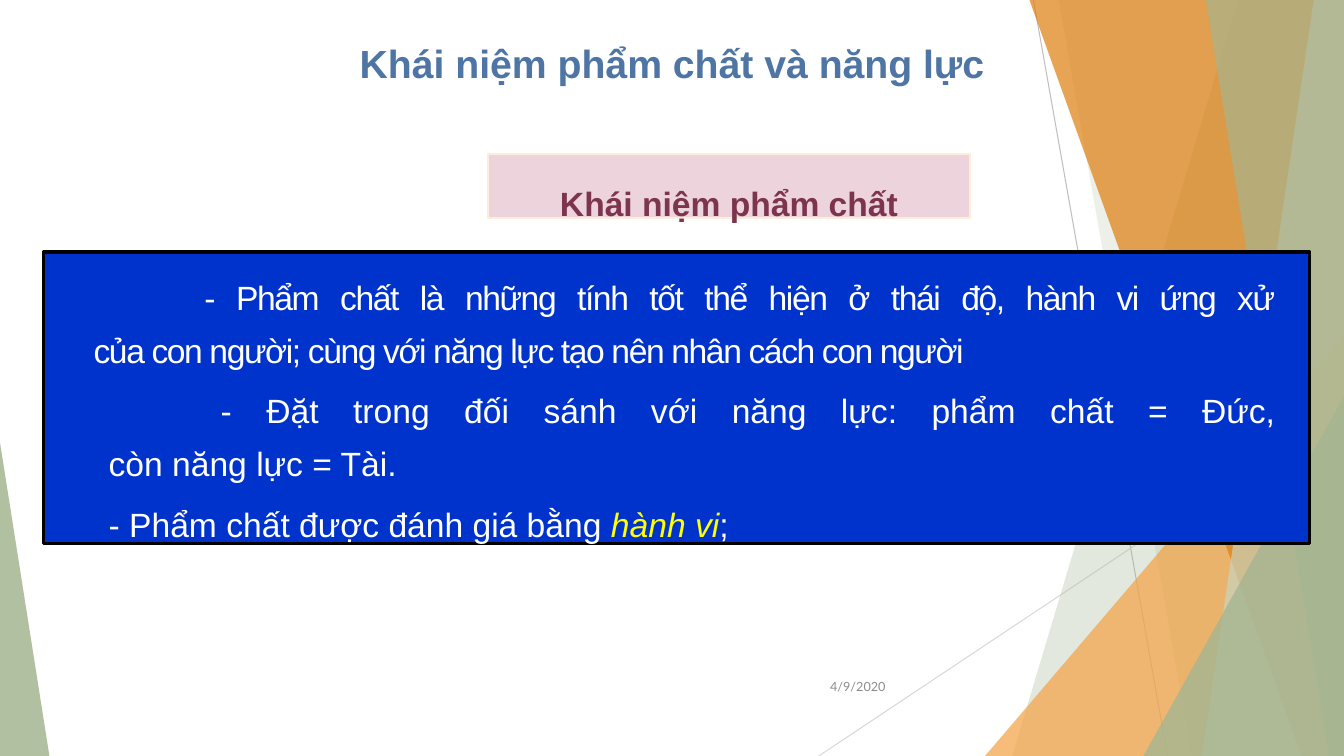
from dataclasses import dataclass

from lxml.etree import SubElement
from pptx import Presentation
from pptx.dml.color import RGBColor
from pptx.enum.shapes import MSO_CONNECTOR as Connector, MSO_SHAPE as Shape
from pptx.enum.text import MSO_ANCHOR as Anchor, PP_ALIGN as Align
from pptx.oxml.ns import qn
from pptx.util import Inches, Pt


@dataclass(frozen=True)
class Theme:
    green: str = "A5B592"
    pale_green: str = "C9D3BE"
    orange: str = "F3A447"
    dark_orange: str = "DD7E0E"
    line_dark: str = "BFBFBF"
    line_light: str = "D9D9D9"
    title: str = "4E75A3"
    heading: str = "7C354D"
    heading_fill: str = "ECD3DC"
    heading_line: str = "FDEDDA"
    panel: str = "0033CC"
    black: str = "000000"
    white: str = "FFFFFF"
    accent: str = "FFFF00"
    date: str = "8C8C8C"
    font: str = "Arial"
    date_font: str = "Lato"
    title_size: int = 28
    body_size: int = 24
    date_size: int = 9


THEME = Theme()
WIDTH, HEIGHT = 13.33, 7.5


def rgb(color):
    return RGBColor.from_string(color)


def style(font, color, size, name=THEME.font, bold=False):
    font.name, font.size, font.bold = name, Pt(size), bold
    font.color.rgb = rgb(color)


def paint(shape, color, opacity=100, line=None, line_width=0):
    shape.shadow.inherit = False
    shape.fill.solid()
    shape.fill.fore_color.rgb = rgb(color)
    if opacity < 100:
        color_element = shape.fill._xPr.find(qn("a:solidFill"))[0]
        SubElement(color_element, qn("a:alpha"), val=str(opacity * 1000))
    if line:
        shape.line.color.rgb = rgb(line)
        shape.line.width = Pt(line_width)
    else:
        shape.line.fill.background()


def add_line(slide, start, end, color):
    line = slide.shapes.add_connector(
        Connector.STRAIGHT, *(Inches(value) for value in start + end))
    line.line.color.rgb = rgb(color)
    line.line.width = Pt(0.75)
    SubElement(line._element.spPr, qn("a:effectLst"))


def add_facet(slide, top_left, bottom_left, color, opacity):
    """Full-height band from a slanted left edge to the slide's right edge."""
    corners = [(top_left, 0), (WIDTH, 0), (WIDTH, HEIGHT), (bottom_left, HEIGHT)]
    points = [(Inches(x), Inches(y)) for x, y in corners]
    builder = slide.shapes.build_freeform(*points[0])
    builder.add_line_segments(points[1:], close=True)
    paint(builder.convert_to_shape(), color, opacity)


def add_corner(slide, left, top, width, apex, color, opacity):
    """Right triangle standing on the slide's bottom edge."""
    triangle = slide.shapes.add_shape(
        Shape.ISOSCELES_TRIANGLE, Inches(left), Inches(top),
        Inches(width), Inches(HEIGHT - top))
    triangle.adjustments[0] = apex
    paint(triangle, color, opacity)


def add_backdrop(slide):
    add_line(slide, (10.25, 0), (11.58, HEIGHT), THEME.line_dark)
    add_line(slide, (WIDTH, 4.03), (8.12, HEIGHT), THEME.line_light)
    add_facet(slide, 12.28, 10.04, THEME.green, 30)
    add_facet(slide, 10.5, 11.82, THEME.green, 20)
    add_corner(slide, 9.77, 3.33, 3.56, 1, THEME.orange, 72)
    add_facet(slide, 10.21, 12.91, THEME.dark_orange, 70)
    add_facet(slide, 13.03, 11.92, THEME.pale_green, 70)
    add_facet(slide, 11.96, 13.18, THEME.green, 65)
    add_corner(slide, 11.34, 3.93, 1.99, 1, THEME.green, 80)
    add_corner(slide, 0, 4.39, 0.49, 0, THEME.green, 85)


def add_label(slide, box, text, align, anchor=Anchor.TOP, **font):
    label = slide.shapes.add_textbox(*(Inches(value) for value in box))
    frame = label.text_frame
    frame.word_wrap = True
    frame.vertical_anchor = anchor
    frame.text = text
    frame.paragraphs[0].alignment = align
    style(frame.paragraphs[0].font, **font)


def add_text_panel(slide, box, fill, line, line_width, top_inset):
    panel = slide.shapes.add_shape(
        Shape.RECTANGLE, *(Inches(value) for value in box))
    paint(panel, fill, line=line, line_width=line_width)
    frame = panel.text_frame
    frame.word_wrap = True
    frame.vertical_anchor = Anchor.TOP
    frame.margin_top = Inches(top_inset)
    return frame


def add_heading(slide, box):
    frame = add_text_panel(
        slide, box, THEME.heading_fill, THEME.heading_line, 1.5, 0.08)
    frame.text = "Khái niệm phẩm chất"
    paragraph = frame.paragraphs[0]
    paragraph.alignment = Align.CENTER
    paragraph.line_spacing = 1.5
    style(paragraph.font, THEME.heading, THEME.body_size, bold=True)


def add_definition(slide, box):
    frame = add_text_panel(slide, box, THEME.panel, THEME.black, 2.25, 0.13)
    frame.margin_right = Inches(0.34)
    # Runs, left margin, first-line indent, letter spacing in points
    paragraphs = [
        (["- Phẩm chất là những tính tốt thể hiện ở thái độ, hành vi ứng xử\v"
          "của con người; cùng với năng lực tạo nên nhân cách con người"],
         0.4, 1.1, -1),
        (["- Đặt trong đối sánh với năng lực: phẩm chất = Đức,\v"
          "còn năng lực = Tài."], 0.55, 1.11, 0),
        (["- Phẩm chất được đánh giá bằng ", "hành vi", ";"], 0.55, 0, 0),
    ]
    for index, (texts, margin, indent, spacing) in enumerate(paragraphs):
        paragraph = frame.add_paragraph() if index else frame.paragraphs[0]
        paragraph.text = texts[0]
        for text in texts[1:]:
            paragraph.add_run().text = text
        paragraph.alignment = Align.JUSTIFY
        paragraph.line_spacing = 1.3
        paragraph.space_before = Pt(6 if index else 0)
        properties = paragraph._p.get_or_add_pPr()
        properties.set("marL", str(Inches(margin)))
        properties.set("indent", str(Inches(indent)))
        for run in paragraph.runs:
            style(run.font, THEME.white, THEME.body_size)
            run._r.get_or_add_rPr().set("spc", str(spacing * 100))
    behaviour = frame.paragraphs[-1].runs[1].font
    behaviour.italic = True
    behaviour.color.rgb = rgb(THEME.accent)


def main():
    presentation = Presentation()
    presentation.slide_width = Inches(WIDTH)
    presentation.slide_height = Inches(HEIGHT)
    slide = presentation.slides.add_slide(presentation.slide_layouts[6])
    add_backdrop(slide)
    add_label(slide, (7.88, 6.61, 1, 0.4), "4/9/2020", Align.RIGHT, Anchor.MIDDLE,
              color=THEME.date, size=THEME.date_size, name=THEME.date_font)
    add_label(slide, (0, 0.34, WIDTH, 0.57), "Khái niệm phẩm chất và năng lực",
              Align.CENTER, color=THEME.title, size=THEME.title_size, bold=True)
    add_definition(slide, (0.43, 2.5, 12.56, 2.89))
    add_heading(slide, (4.84, 1.53, 4.78, 0.63))
    presentation.save("out.pptx")


if __name__ == "__main__":
    main()
